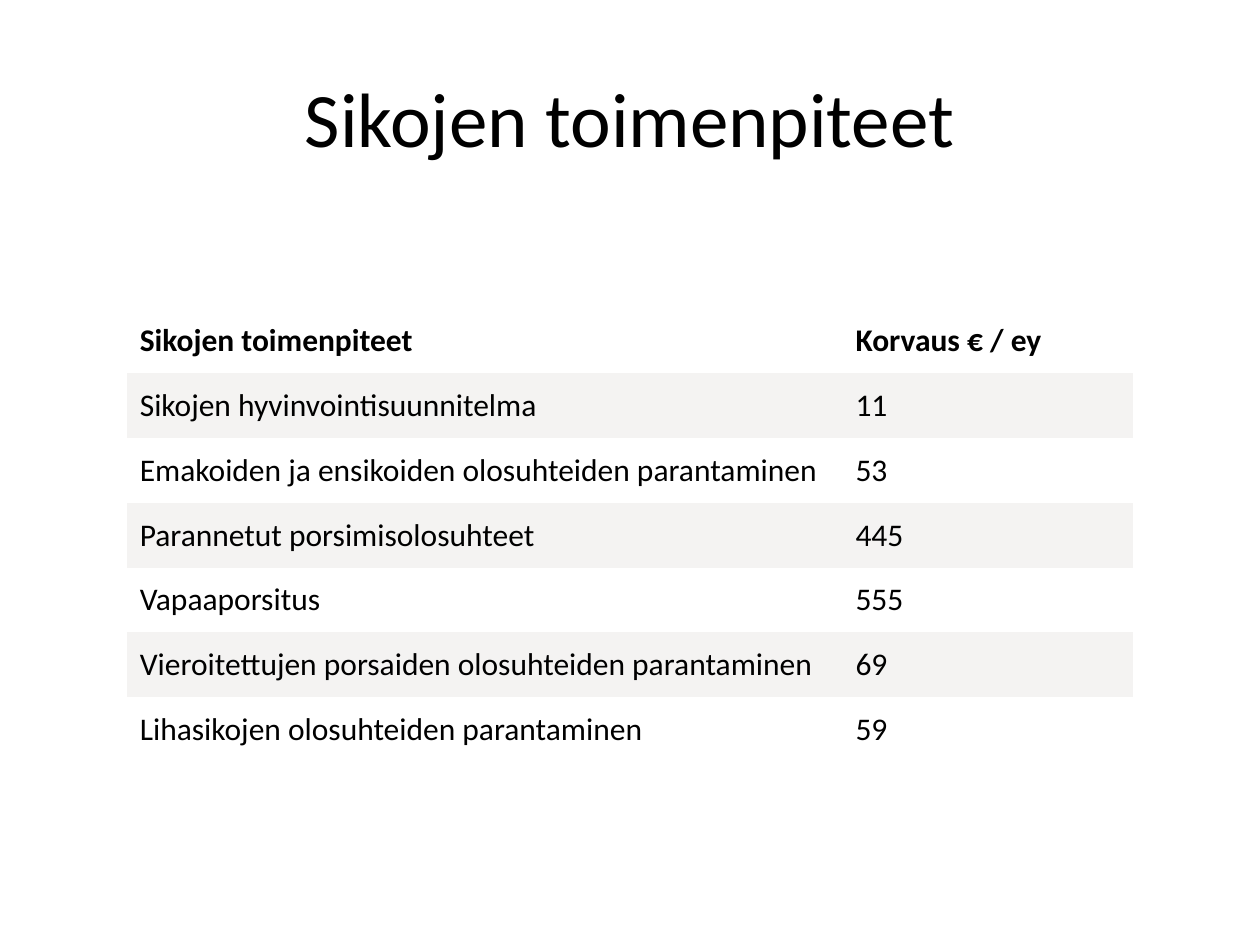
from dataclasses import dataclass

from pptx import Presentation
from pptx.dml.color import RGBColor
from pptx.enum.text import MSO_ANCHOR, PP_ALIGN
from pptx.oxml.ns import qn
from pptx.slide import Slide
from pptx.table import _Cell
from pptx.text.text import _Paragraph
from pptx.util import Pt

MIDDLE = MSO_ANCHOR.MIDDLE
CENTER = PP_ALIGN.CENTER

BLACK = RGBColor(0x00, 0x00, 0x00)
WHITE = RGBColor(0xFF, 0xFF, 0xFF)
BAND_GRAY = RGBColor(0xF4, 0xF3, 0xF2)

FONT_NAME = "Calibri"
PLAIN_TABLE_STYLE = "{2D5ABB26-0587-4C30-8999-92F81FD0307C}"
COLUMN_WIDTHS = (Pt(409), Pt(165.6))
ROW_HEIGHT = Pt(37)
CELL_MARGIN = Pt(7.2)


@dataclass(frozen=True)
class Measure:
    name: str
    compensation: str


MEASURES = (
    Measure("Sikojen toimenpiteet", "Korvaus € / ey"),
    Measure("Sikojen hyvinvointisuunnitelma", "11"),
    Measure("Emakoiden ja ensikoiden olosuhteiden parantaminen", "53"),
    Measure("Parannetut porsimisolosuhteet", "445"),
    Measure("Vapaaporsitus", "555"),
    Measure("Vieroitettujen porsaiden olosuhteiden parantaminen", "69"),
    Measure("Lihasikojen olosuhteiden parantaminen", "59"),
)


def format_runs(paragraph: _Paragraph, size: int, bold: bool = False) -> None:
    for run in paragraph.runs:
        run.font.name = FONT_NAME
        run.font.size = Pt(size)
        run.font.bold = bold
        run.font.color.rgb = BLACK


def add_title(slide: Slide, text: str) -> None:
    title = slide.shapes.add_textbox(Pt(36), Pt(21.6), Pt(648), Pt(90))
    title.text_frame.word_wrap = True
    title.text_frame.vertical_anchor = MIDDLE
    title.text_frame.text = text
    paragraph = title.text_frame.paragraphs[0]
    paragraph.alignment = CENTER
    format_runs(paragraph, 44)


def fill_cell(cell: _Cell, text: str, color: RGBColor, bold: bool) -> None:
    cell.fill.solid()
    cell.fill.fore_color.rgb = color
    cell.vertical_anchor = MIDDLE
    cell.margin_left = cell.margin_right = CELL_MARGIN
    cell.margin_top = cell.margin_bottom = CELL_MARGIN
    cell.text_frame.text = text
    format_runs(cell.text_frame.paragraphs[0], 18, bold)


def add_measure_table(slide: Slide, measures: tuple[Measure, ...]) -> None:
    frame = slide.shapes.add_table(
        len(measures), len(COLUMN_WIDTHS), Pt(72.7), Pt(176.4),
        sum(COLUMN_WIDTHS), ROW_HEIGHT * len(measures),
    )
    for style in frame.element.iter(qn("a:tableStyleId")):
        style.text = PLAIN_TABLE_STYLE
    table = frame.table
    for column, width in zip(table.columns, COLUMN_WIDTHS):
        column.width = width
    for index, (row, measure) in enumerate(zip(table.rows, measures)):
        row.height = ROW_HEIGHT
        color = BAND_GRAY if index % 2 else WHITE
        for cell, text in zip(row.cells, (measure.name, measure.compensation)):
            fill_cell(cell, text, color, bold=index == 0)


def main() -> None:
    presentation = Presentation()
    presentation.slide_width = Pt(720)
    presentation.slide_height = Pt(540)
    slide = presentation.slides.add_slide(presentation.slide_layouts[6])
    add_title(slide, "Sikojen toimenpiteet")
    add_measure_table(slide, MEASURES)
    presentation.save("out.pptx")


if __name__ == "__main__":
    main()
